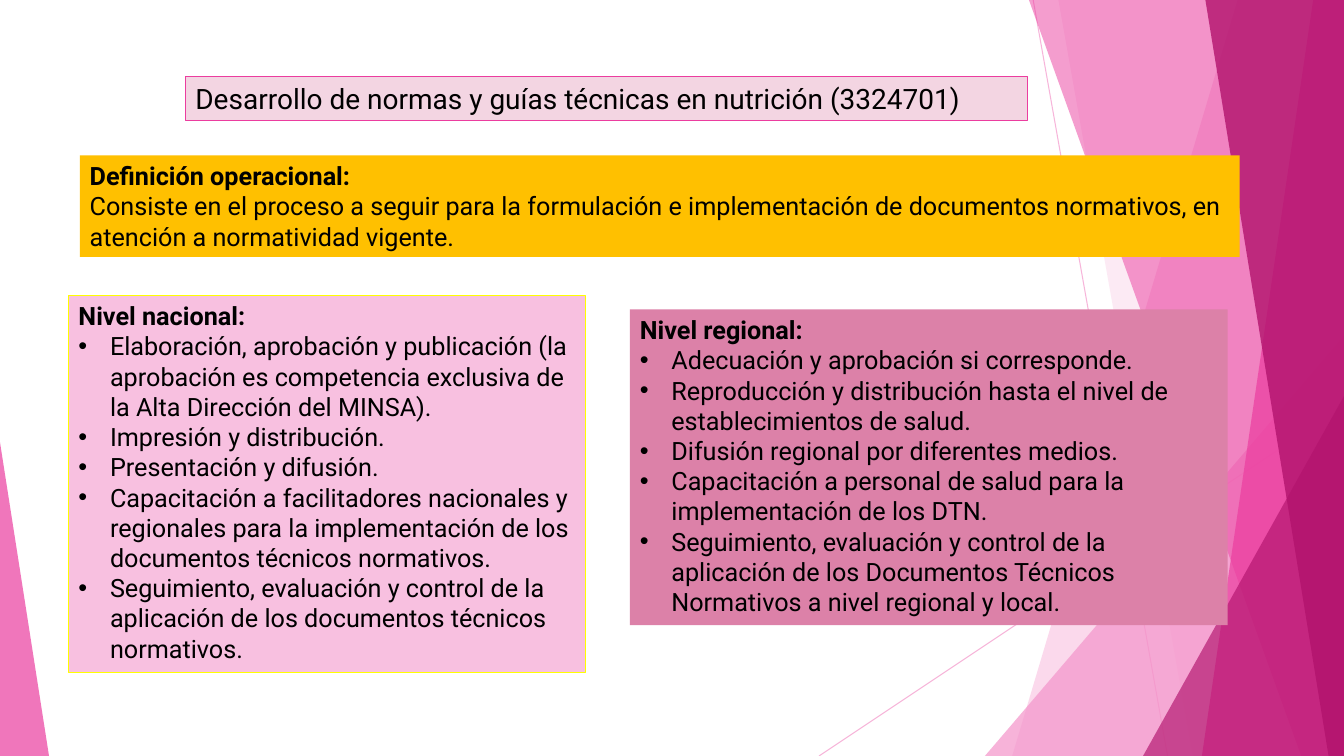
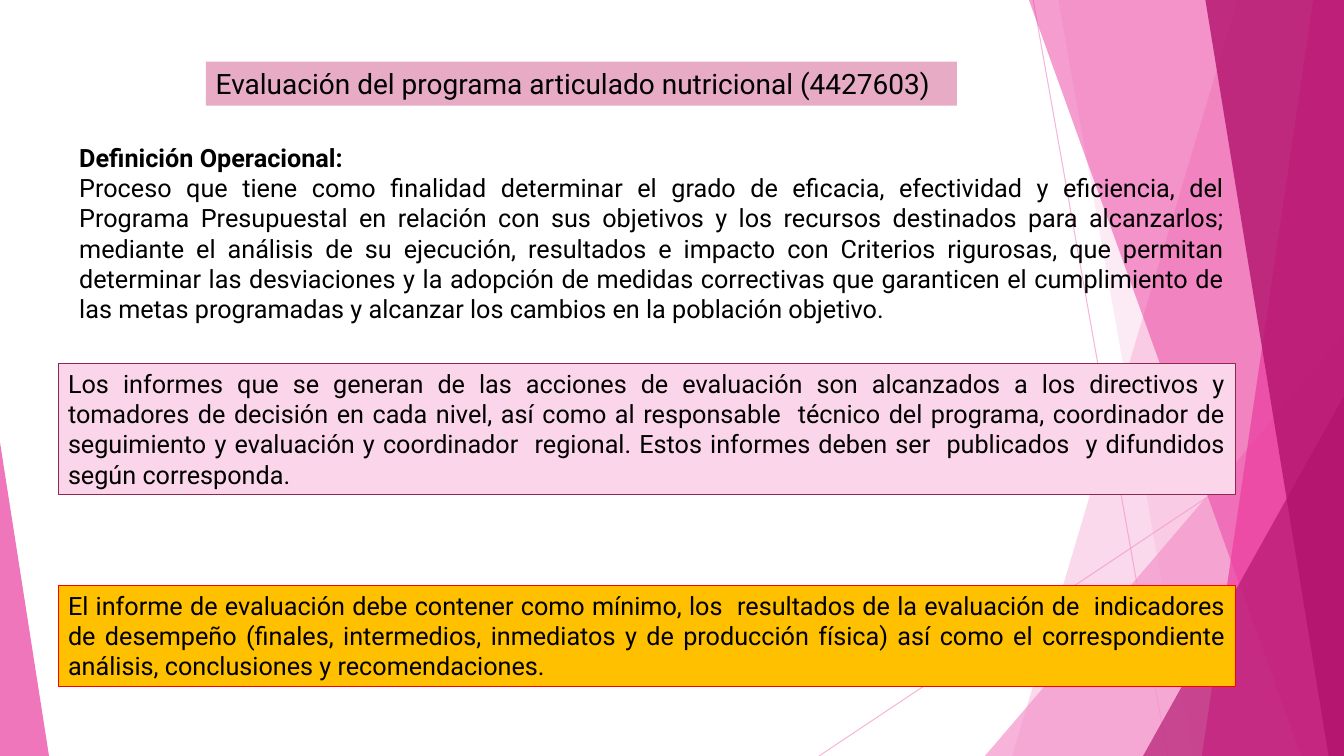
from pptx import Presentation
from pptx.dml.color import RGBColor
from pptx.enum.shapes import MSO_CONNECTOR, MSO_SHAPE
from pptx.enum.text import MSO_ANCHOR, MSO_AUTO_SIZE, PP_ALIGN
from pptx.oxml.ns import qn
from pptx.util import Pt
from lxml.etree import SubElement

WIDTH, HEIGHT = 960, 540
FONT = "Roboto"

BLACK = RGBColor(0x00, 0x00, 0x00)
LIGHT_PINK = RGBColor(0xF4, 0x96, 0xCB)
PINK = RGBColor(0xEB, 0x3D, 0x9F)
MAGENTA = RGBColor(0xB2, 0x13, 0x6D)
AMBER = RGBColor(0xFF, 0xC0, 0x00)
YELLOW = RGBColor(0xFF, 0xFF, 0x00)
RED = RGBColor(0xFF, 0x00, 0x00)
WINE = RGBColor(0x8D, 0x28, 0x53)
PALE_ROSE = RGBColor(0xF3, 0xD5, 0xE2)
SOFT_ROSE = RGBColor(0xE7, 0xAB, 0xC5)
DEEP_ROSE = RGBColor(0xDC, 0x81, 0xA8)
SOFT_PINK = RGBColor(0xF8, 0xC0, 0xE0)
PALE_PINK = RGBColor(0xFB, 0xD5, 0xEA)


# Shared background
def set_alpha(sp, percent):
    for color in sp.element.iter(qn("a:srgbClr")):
        SubElement(color, qn("a:alpha")).set("val", str(percent * 1000))


def paint(sp, color, alpha):
    sp.shadow.inherit = False
    sp.fill.solid()
    sp.fill.fore_color.rgb = color
    sp.line.fill.background()
    set_alpha(sp, alpha)


def add_ray(shapes, x1, y1, x2, y2):
    ray = shapes.add_connector(MSO_CONNECTOR.STRAIGHT, Pt(x1), Pt(y1), Pt(x2), Pt(y2))
    ray.line.color.rgb = LIGHT_PINK
    ray.line.width = Pt(0.75)
    set_alpha(ray, 70)
    SubElement(ray.element.spPr, qn("a:effectLst"))


def add_panel(shapes, top_x, bottom_x, color, alpha):
    """Slanted panel that runs to the right edge of the slide."""
    outline = shapes.build_freeform(Pt(top_x), 0)
    outline.add_line_segments(
        [(Pt(WIDTH), 0), (Pt(WIDTH), Pt(HEIGHT)), (Pt(bottom_x), Pt(HEIGHT))])
    paint(outline.convert_to_shape(), color, alpha)


def add_corner(shapes, left, top, width, apex, color, alpha):
    """Right triangle that stands on the bottom edge of the slide."""
    sp = shapes.add_shape(MSO_SHAPE.ISOSCELES_TRIANGLE,
                          Pt(left), Pt(top), Pt(width), Pt(HEIGHT - top))
    sp.adjustments[0] = apex
    paint(sp, color, alpha)


def add_background(slide):
    """Draw the facets, then move them to the layout that all slides use."""
    shapes = slide.shapes
    add_ray(shapes, 738, 0, 834, HEIGHT)
    add_ray(shapes, WIDTH, 290, 585, HEIGHT)
    add_panel(shapes, 884, 723, LIGHT_PINK, 36)
    add_panel(shapes, 756, 852, LIGHT_PINK, 20)
    add_corner(shapes, 703.5, 240, 256.5, 1, LIGHT_PINK, 72)
    add_panel(shapes, 735, 929.5, PINK, 50)
    add_panel(shapes, 938, 858.5, PINK, 70)
    add_panel(shapes, 861, 949, MAGENTA, 80)
    add_corner(shapes, 816.5, 283, 143.5, 1, MAGENTA, 66)
    add_corner(shapes, 0, 316, 35, 0, PINK, 70)
    for sp in list(shapes):
        slide.slide_layout.shapes.element.append(sp.element)


# Text
def add_text(tf, text, size=18, bold=False, align=PP_ALIGN.LEFT, bullet=False):
    p = tf.paragraphs[0]
    if p.runs:
        p = tf.add_paragraph()
    p.alignment = align
    if bullet:
        pPr = p._p.get_or_add_pPr()
        pPr.set("marL", str(Pt(22.5)))
        pPr.set("indent", str(-Pt(22.5)))
        SubElement(pPr, qn("a:buFont")).set("typeface", "Arial")
        SubElement(pPr, qn("a:buChar")).set("char", "•")
    r = p.add_run()
    r.text = text
    r.font.name = FONT
    r.font.size = Pt(size)
    r.font.bold = bold
    r.font.color.rgb = BLACK


def add_box(slide, left, top, width, height, fill=None, line=None):
    """Text frame of a box; without a fill it is a plain text box."""
    place = Pt(left), Pt(top), Pt(width), Pt(height)
    if fill is None:
        sp = slide.shapes.add_textbox(*place)
    else:
        sp = slide.shapes.add_shape(MSO_SHAPE.RECTANGLE, *place)
        sp.shadow.inherit = False
        sp.fill.solid()
        sp.fill.fore_color.rgb = fill
        if line is None:
            sp.line.fill.background()
        else:
            sp.line.color.rgb = line
            sp.line.width = Pt(0.75)
    tf = sp.text_frame
    tf.word_wrap = True
    tf.auto_size = MSO_AUTO_SIZE.SHAPE_TO_FIT_TEXT
    tf.vertical_anchor = MSO_ANCHOR.TOP
    return tf


def add_title(slide, text, left, top, width, fill, line=None):
    add_text(add_box(slide, left, top, width, 31.5, fill, line), text, size=20)


def add_section(tf, heading, *texts, **text_format):
    add_text(tf, heading, bold=True, align=text_format.get("align", PP_ALIGN.LEFT))
    for text in texts:
        add_text(tf, text, **text_format)


# Slides
def fill_guidelines(slide):
    add_title(slide, "Desarrollo de normas y guías técnicas en nutrición (3324701)",
              132.5, 54.5, 601.5, PALE_ROSE, PINK)
    add_section(
        add_box(slide, 57, 111, 828.5, 72.5, AMBER),
        "Definición operacional:",
        "Consiste en el proceso a seguir para la formulación e implementación de "
        "documentos normativos, en atención a normatividad vigente.")
    add_section(
        add_box(slide, 49, 211, 369, 269.5, SOFT_PINK, YELLOW),
        "Nivel nacional:",
        "Elaboración, aprobación y publicación (la aprobación es competencia "
        "exclusiva de la Alta Dirección del MINSA).",
        "Impresión y distribución.",
        "Presentación y difusión.",
        "Capacitación a facilitadores nacionales y regionales para la "
        "implementación de los documentos técnicos normativos.",
        "Seguimiento, evaluación y control de la aplicación de los documentos "
        "técnicos normativos.",
        bullet=True)
    add_section(
        add_box(slide, 450, 221, 427, 225.5, DEEP_ROSE),
        "Nivel regional:",
        "Adecuación y aprobación si corresponde.",
        "Reproducción y distribución hasta el nivel de establecimientos de salud.",
        "Difusión regional por diferentes medios.",
        "Capacitación a personal de salud para la implementación de los DTN.",
        "Seguimiento, evaluación y control de la aplicación de los Documentos "
        "Técnicos Normativos a nivel regional y local.",
        bullet=True)


def fill_evaluation(slide):
    add_title(slide, "Evaluación del programa articulado nutricional (4427603)",
              147, 44, 536.5, SOFT_ROSE)
    add_section(
        add_box(slide, 49.5, 98, 832, 138),
        "Definición Operacional:",
        "Proceso que tiene como finalidad determinar el grado de eficacia, "
        "efectividad y eficiencia, del Programa Presupuestal en relación con sus "
        "objetivos y los recursos destinados para alcanzarlos; mediante el análisis "
        "de su ejecución, resultados e impacto con Criterios rigurosas, que permitan "
        "determinar las desviaciones y la adopción de medidas correctivas que "
        "garanticen el cumplimiento de las metas programadas y alcanzar los cambios "
        "en la población objetivo.",
        align=PP_ALIGN.JUSTIFY)
    reports = [
        (259.5, 94, PALE_PINK, WINE,
         "Los informes que se generan de las acciones de evaluación son alcanzados "
         "a los directivos y tomadores de decisión en cada nivel, así como al "
         "responsable  técnico del programa, coordinador de seguimiento y evaluación "
         "y coordinador  regional. Estos informes deben ser  publicados  y difundidos "
         "según corresponda."),
        (418, 72.5, AMBER, RED,
         "El informe de evaluación debe contener como mínimo, los  resultados de la "
         "evaluación de  indicadores de desempeño (finales, intermedios, inmediatos y "
         "de producción física) así como el correspondiente análisis, conclusiones y "
         "recomendaciones."),
    ]
    for top, height, fill, line, text in reports:
        tf = add_box(slide, 41.5, top, 841, height, fill, line)
        add_text(tf, text, align=PP_ALIGN.JUSTIFY)


def main():
    prs = Presentation()
    prs.slide_width, prs.slide_height = Pt(WIDTH), Pt(HEIGHT)
    blank = prs.slide_layouts[6]
    for ph in list(blank.placeholders):
        blank.shapes.element.remove(ph.element)
    guidelines, evaluation = [prs.slides.add_slide(blank) for _ in range(2)]
    add_background(guidelines)
    fill_guidelines(guidelines)
    fill_evaluation(evaluation)
    prs.save("out.pptx")


if __name__ == "__main__":
    main()
